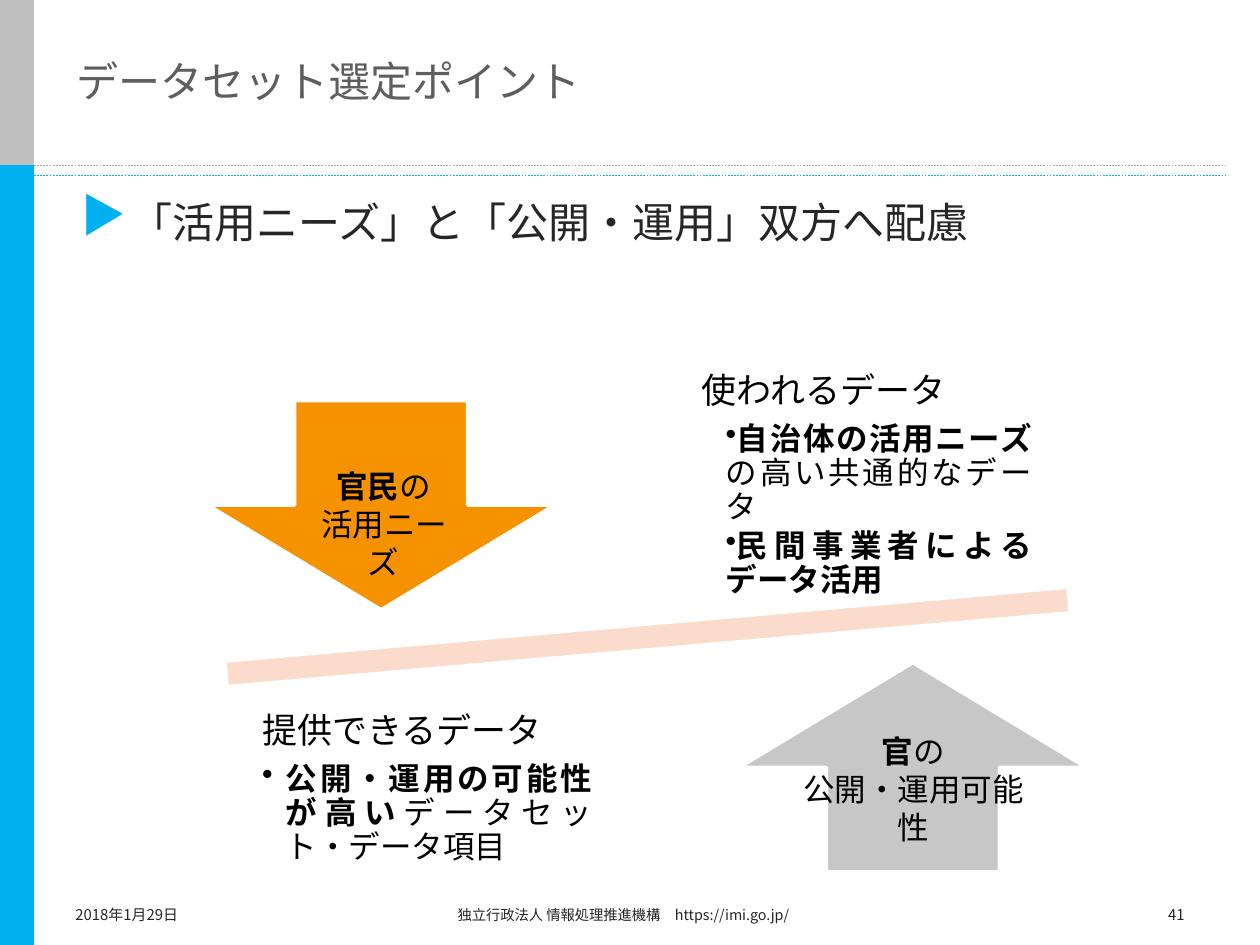
from dataclasses import dataclass
from typing import Optional

from lxml import etree
from pptx import Presentation
from pptx import util as u
from pptx.dml.color import RGBColor
from pptx.enum import dml, shapes, text
from pptx.oxml.ns import qn

EMU_PER_PX = 9144  # 100 px to the inch
COLORS = {
    "blue": "00B0F0", "silver": "BFBFBF", "rule": "A6A6A6", "white": "FFFFFF",
    "peach": "FBDCCC", "orange": "F69200", "gray": "C7C7C7",
    "title": "5E5E5E", "body": "262626", "black": "000000",
}
GOTHIC = "Noto Sans CJK JP"
LATIN = "Calibri"
ALIGN = text.PP_ALIGN
TOP, MIDDLE = text.MSO_ANCHOR.TOP, text.MSO_ANCHOR.MIDDLE
KIND = shapes.MSO_SHAPE
Box = tuple[int, int, int, int]


@dataclass(frozen=True)
class Bullet:
    char: str
    margin: int
    indent: int
    color: Optional[str] = None
    percent: int = 100


@dataclass(frozen=True)
class Line:
    """One paragraph: bold text first, then regular text; a newline is a line break."""
    regular: str = ""
    bold: str = ""
    size: float = 18
    font: str = LATIN
    color: str = "black"
    align: Optional[ALIGN] = None
    spacing: Optional[float] = None
    after: Optional[float] = None
    level: int = 0
    bullet: Optional[Bullet] = None


@dataclass(frozen=True)
class TextBlock:
    box: Box
    lines: tuple[Line, ...]
    anchor: text.MSO_ANCHOR = TOP
    inset: Optional[int] = None
    grow: bool = False


@dataclass(frozen=True)
class Figure:
    kind: KIND
    box: Box
    fill: str
    outline: Optional[str] = None
    rotation: int = 0


def px(value: int) -> u.Emu:
    return u.Emu(value * EMU_PER_PX)


def rgb(name: str) -> RGBColor:
    return RGBColor.from_string(COLORS[name])


def add_figure(slide, figure: Figure) -> None:
    shape = slide.shapes.add_shape(figure.kind, *map(px, figure.box))
    shape.shadow.inherit = False
    shape.rotation = figure.rotation
    shape.fill.solid()
    shape.fill.fore_color.rgb = rgb(figure.fill)
    if figure.outline:
        shape.line.color.rgb = rgb(figure.outline)
        shape.line.width = u.Pt(2)
    else:
        shape.line.fill.background()


def add_rule(slide, y: int, color: str) -> None:
    rule = slide.shapes.add_connector(
        shapes.MSO_CONNECTOR.STRAIGHT, px(27), px(y), px(972), px(y))
    rule.line.color.rgb = rgb(color)
    rule.line.width = u.Pt(0.25)
    rule.line.dash_style = dml.MSO_LINE.DASH
    etree.SubElement(rule._element.spPr, qn("a:effectLst"))


def set_bullet(paragraph, bullet: Bullet) -> None:
    properties = paragraph._p.get_or_add_pPr()
    properties.set("marL", str(px(bullet.margin)))
    properties.set("indent", str(px(bullet.indent)))
    if bullet.color:
        color = etree.SubElement(properties, qn("a:buClr"))
        etree.SubElement(color, qn("a:srgbClr"), val=COLORS[bullet.color])
    etree.SubElement(properties, qn("a:buSzPct"), val=str(bullet.percent * 1000))
    etree.SubElement(properties, qn("a:buChar"), char=bullet.char)


def set_font(paragraph, line: Line) -> None:
    """Set the paragraph font, for East Asian characters too."""
    font = paragraph.font
    font.size = u.Pt(line.size)
    font.color.rgb = rgb(line.color)
    font.name = line.font
    if line.font == GOTHIC:
        defaults = paragraph._p.pPr.find(qn("a:defRPr"))
        etree.SubElement(defaults, qn("a:ea"), typeface=line.font)


def add_runs(paragraph, content: str, bold: bool) -> None:
    for index, part in enumerate(content.split("\n")):
        if index:
            paragraph.add_line_break()
        if part:
            run = paragraph.add_run()
            run.text = part
            if bold:
                run.font.bold = True


def add_text(slide, block: TextBlock) -> None:
    frame = slide.shapes.add_textbox(*map(px, block.box)).text_frame
    frame.word_wrap = True
    frame.vertical_anchor = block.anchor
    if block.grow:
        frame.auto_size = text.MSO_AUTO_SIZE.SHAPE_TO_FIT_TEXT
    if block.inset is not None:
        frame.margin_left = frame.margin_right = px(block.inset)
        frame.margin_top = frame.margin_bottom = px(block.inset)
    for index, line in enumerate(block.lines):
        paragraph = frame.add_paragraph() if index else frame.paragraphs[0]
        paragraph.level = line.level
        paragraph.alignment = line.align
        paragraph.line_spacing = line.spacing
        if line.after is not None:
            paragraph.space_after = u.Pt(line.after)
        if line.bullet:
            set_bullet(paragraph, line.bullet)
        set_font(paragraph, line)
        add_runs(paragraph, line.bold, True)
        add_runs(paragraph, line.regular, False)


def heading(content: str) -> Line:
    return Line(content, size=20, spacing=0.9, after=7)


def point(bold: str, regular: str = "", indent: int = 0) -> Line:
    return Line(regular, bold, align=ALIGN.JUSTIFY, spacing=0.9, after=2.7,
                level=1, bullet=Bullet("•", 19, indent))


def data_block(left: int, top: int, *lines: Line) -> TextBlock:
    return TextBlock((left, top, 294, 175), lines, MIDDLE, inset=16)


def arrow_label(box: Box, bold: str, regular: str) -> TextBlock:
    return TextBlock(box, (Line(regular, bold, align=ALIGN.CENTER),), grow=True)


def footer(left: int, width: int, content: str, align: ALIGN, size: float = 8.5) -> TextBlock:
    line = Line(content, size=size, font=GOTHIC, color="body", align=align)
    return TextBlock((left, 714, width, 31), (line,))


FRAME = (
    Figure(KIND.RECTANGLE, (0, 0, 27, 750), "blue"),
    Figure(KIND.RECTANGLE, (0, 0, 27, 131), "silver"),
)
BALANCE = (
    Figure(KIND.MATH_MINUS, (57, 462, 914, 87), "peach", "white", 355),
    Figure(KIND.DOWN_ARROW, (165, 318, 275, 166), "orange", "white"),
    Figure(KIND.UP_ARROW, (587, 526, 275, 166), "gray", "white"),
)
TEXTS = (
    TextBlock((51, 5, 764, 118),
              (Line("データセット選定ポイント", size=24, font=GOTHIC, color="title"),), MIDDLE),
    TextBlock((55, 147, 918, 130),
              (Line("「活用ニーズ」と「公開・運用」双方へ配慮", size=24, font=GOTHIC,
                    color="body", spacing=1.1, bullet=Bullet("▶", 39, -39, "blue", 120)),)),
    data_block(541, 298, heading("使われるデータ"),
               point("自治体の活用ニーズ", "の高い共通的なデータ"),
               point("民間事業者によるデータ活用")),
    data_block(192, 539, heading("提供できるデータ"),
               point("公開・運用の可能性が高い", "データセット・データ項目", -19)),
    footer(50, 233, "2018年1月29日", ALIGN.LEFT),
    footer(342, 317, "独立行政法人 情報処理推進機構　https://imi.go.jp/　", ALIGN.CENTER, 8.2),
    footer(717, 233, "41", ALIGN.RIGHT),
    arrow_label((234, 366, 141, 71), "官民", "の\n活用ニーズ"),
    arrow_label((620, 576, 210, 71), "官", "の\n公開・運用可能性"),
)


def main() -> None:
    presentation = Presentation()
    presentation.slide_width, presentation.slide_height = px(1000), px(750)
    slide = presentation.slides.add_slide(presentation.slide_layouts[6])
    for figure in FRAME:
        add_figure(slide, figure)
    add_rule(slide, 131, "rule")
    add_rule(slide, 139, "blue")
    for figure in BALANCE:
        add_figure(slide, figure)
    for block in TEXTS:
        add_text(slide, block)
    presentation.save("out.pptx")


if __name__ == "__main__":
    main()
